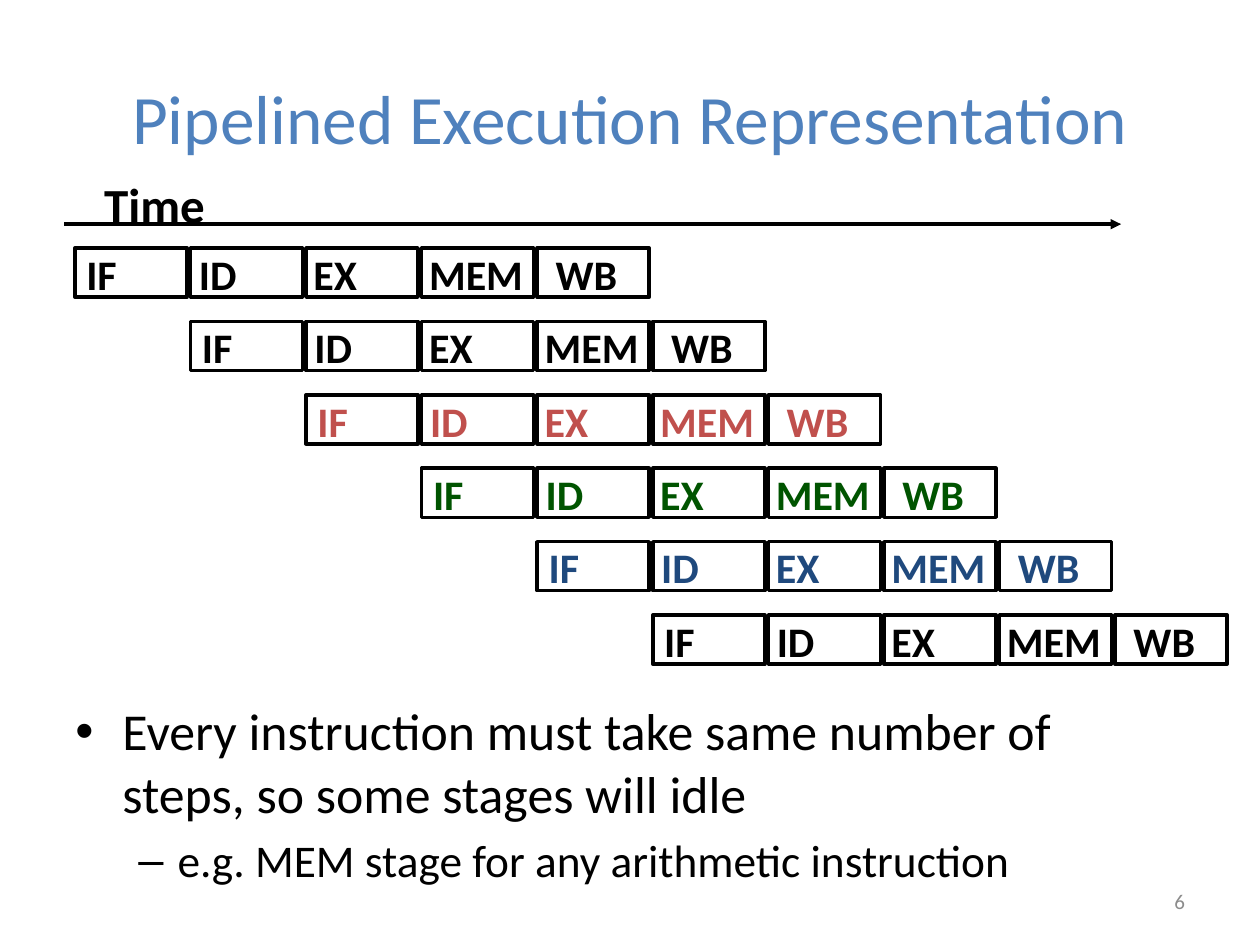
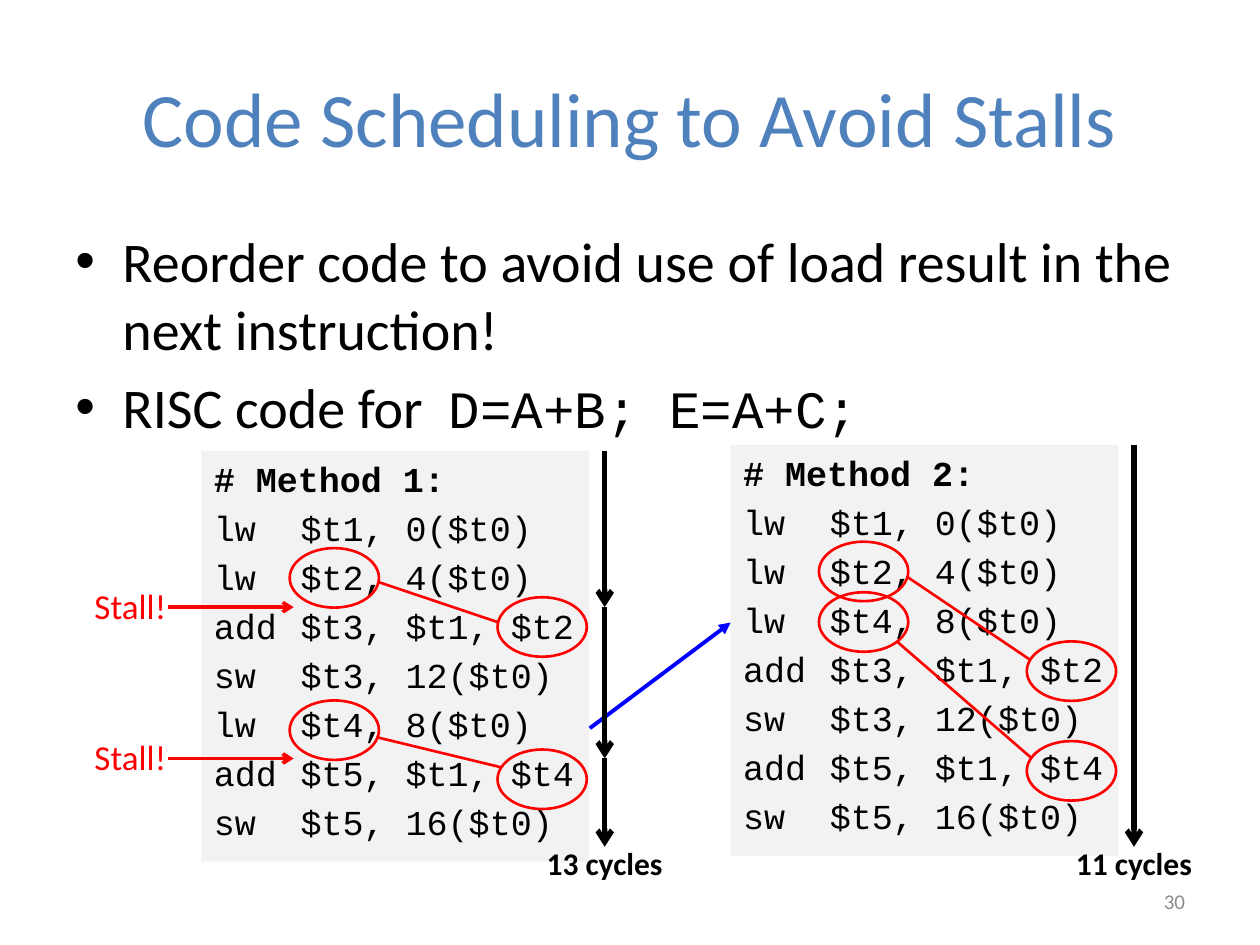
from lxml import etree
from pptx import Presentation
from pptx import util as u
from pptx.dml.color import RGBColor
from pptx.enum import shapes, text
from pptx.oxml import ns

BLACK = RGBColor(0x00, 0x00, 0x00)
TITLE_BLUE = RGBColor(0x4F, 0x81, 0xBD)
NAVY = RGBColor(0x1F, 0x49, 0x7D)
BRICK = RGBColor(0xC0, 0x50, 0x4D)
GREEN = RGBColor(0x00, 0x54, 0x00)
RED = RGBColor(0xFF, 0x00, 0x00)
BLUE = RGBColor(0x00, 0x00, 0xFF)
PALE = RGBColor(0xF2, 0xF2, 0xF2)
GREY = RGBColor(0x8C, 0x8C, 0x8C)

BODY_FONT = "Calibri"
CODE_FONT = "Courier New"
BULLETS = [("•", 0.95, -0.95), ("–", 2.06, -0.79)]
ALIGN = text.PP_ALIGN


def add_xml(parent, tag, **attributes):
    """Append a DrawingML element and return it."""
    values = {name: str(value) for name, value in attributes.items()}
    return etree.SubElement(parent, ns.qn("a:" + tag), values)


def write(paragraph, words, size=20, color=BLACK, bold=False, font=BODY_FONT, align=None):
    """Add a formatted run to a paragraph."""
    run = paragraph.add_run()
    run.text = words
    run.font.name = font
    run.font.size = u.Pt(size)
    run.font.bold = bold
    run.font.color.rgb = color
    if align is not None:
        paragraph.alignment = align


def space_paragraph(paragraph, bullet_level=None, tab=None):
    """Give a paragraph proportional space before, and a bullet or a tab stop."""
    properties = paragraph._p.get_or_add_pPr()
    add_xml(add_xml(properties, "spcBef"), "spcPct", val=20000)
    if bullet_level is not None:
        mark, margin, indent = BULLETS[bullet_level]
        properties.set("marL", str(u.Cm(margin)))
        properties.set("indent", str(u.Cm(indent)))
        paragraph.level = bullet_level
        add_xml(properties, "buFont", typeface="Arial")
        add_xml(properties, "buChar", char=mark)
    if tab is not None:
        add_xml(add_xml(properties, "tabLst"), "tab", pos=u.Cm(tab), algn="l")


class Deck:
    """The presentation, its shared style and the current slide."""

    def __init__(self):
        self.presentation = Presentation()
        self.presentation.slide_width = u.Cm(25.4)
        self.presentation.slide_height = u.Cm(19.05)
        self.slide = None

    def start_slide(self, title, number, title_size):
        """Start a slide with its title and page number."""
        self.slide = self.presentation.slides.add_slide(self.presentation.slide_layouts[6])
        middle = text.MSO_ANCHOR.MIDDLE
        self.label(title, 1.27, 0.76, 22.86, 3.18, anchor=middle, wrap=True,
                   size=title_size, color=TITLE_BLUE, align=ALIGN.CENTER)
        self.label(number, 18.21, 17.65, 5.93, 1.02, anchor=middle, wrap=True,
                   size=12, color=GREY, align=ALIGN.RIGHT)

    def frame(self, left, top, width, height, wrap=True, anchor=text.MSO_ANCHOR.TOP):
        """Add an empty text box and return its text frame."""
        box = self.slide.shapes.add_textbox(u.Cm(left), u.Cm(top), u.Cm(width), u.Cm(height))
        box.text_frame.word_wrap = wrap
        box.text_frame.vertical_anchor = anchor
        return box.text_frame

    def label(self, words, left, top, width, height, wrap=False,
              anchor=text.MSO_ANCHOR.TOP, **style):
        """Add one line of text."""
        frame = self.frame(left, top, width, height, wrap, anchor)
        if not wrap:
            frame.auto_size = text.MSO_AUTO_SIZE.SHAPE_TO_FIT_TEXT
        write(frame.paragraphs[0], words, **style)

    def bullets(self, items, top, height):
        """Add bulleted text from (level, [(words, style), ...]) items."""
        frame = self.frame(1.27, top, 22.86, height)
        for index, (level, runs) in enumerate(items):
            paragraph = frame.add_paragraph() if index else frame.paragraphs[0]
            space_paragraph(paragraph, bullet_level=level)
            for words, style in runs:
                write(paragraph, words, **style)

    def outline(self, kind, left, top, width, height, color=None, weight=None, fill=None):
        """Add a preset shape with an optional line and fill."""
        shape = self.slide.shapes.add_shape(
            kind, u.Cm(left), u.Cm(top), u.Cm(width), u.Cm(height))
        shape.shadow.inherit = False
        if fill is None:
            shape.fill.background()
        else:
            shape.fill.solid()
            shape.fill.fore_color.rgb = fill
        if color is None:
            shape.line.fill.background()
        else:
            shape.line.color.rgb = color
            shape.line.width = u.Pt(weight)
        return shape

    def line(self, start, end, color=BLACK, weight=2, head=None):
        """Add a straight line, with an arrowhead at its end if one is named."""
        connector = self.slide.shapes.add_connector(
            shapes.MSO_CONNECTOR.STRAIGHT, *(u.Cm(value) for value in (*start, *end)))
        connector.line.color.rgb = color
        connector.line.width = u.Pt(weight)
        if head:
            add_xml(connector.line._get_or_add_ln(), "tailEnd", type=head)
        add_xml(connector._element.spPr, "effectLst")

    def code(self, heading, lines, left, top):
        """Add a shaded code listing under a bold heading."""
        panel = self.outline(shapes.MSO_SHAPE.RECTANGLE, left, top, 7.82, 8.28, fill=PALE)
        frame = panel.text_frame
        frame.word_wrap = True
        frame.vertical_anchor = text.MSO_ANCHOR.TOP
        for index, words in enumerate([heading, *lines]):
            paragraph = frame.add_paragraph() if index else frame.paragraphs[0]
            space_paragraph(paragraph, tab=1.75)
            write(paragraph, words, font=CODE_FONT, bold=index == 0, align=ALIGN.LEFT)

    def dependency(self, source, target, start, end):
        """Circle two registers and link them."""
        for left, top in (source, target):
            self.outline(shapes.MSO_SHAPE.OVAL, left, top, 1.8, 1.2, RED, 1.5)
        self.line(start, end, RED, 1.5)

    def stall(self, y):
        """Mark a stall with a label and an arrow at height y."""
        self.label("Stall!", 1.52, y - 0.59, 2.08, 1.12, wrap=True, color=RED, align=ALIGN.RIGHT)
        self.line((3.38, y), (5.92, y), RED, 2, "arrow")

    def cycles(self, words, x, stops):
        """Draw chained time arrows down column x and their cycle count."""
        for top, bottom in zip(stops, stops[1:]):
            self.line((x, top), (x, bottom), weight=3, head="arrow")
        self.label(words, x - 1.42, 16.89, 2.84, 1.02, size=18, bold=True)


def pipeline_slide(deck):
    """Build the staircase of pipelined instructions."""
    deck.start_slide("Pipelined Execution Representation", "6", 39.6)
    deck.bullets([
        (0, [("Every instruction must take same number of steps, so some stages will idle",
              {"size": 29.6})]),
        (1, [("e.g. MEM stage for any arithmetic instruction", {"size": 25.9})]),
    ], 13.97, 3.86)
    stages = [("IF", -0.02, 1.12), ("ID", -0.08, 1.27), ("EX", -0.1, 1.4),
              ("MEM", -0.1, 2.41), ("WB", 0.12, 1.9)]
    step, row_height = 2.33, 1.48
    for row, color in enumerate([BLACK, BLACK, BRICK, GREEN, NAVY, BLACK]):
        top = 5 + row * row_height
        for column, (stage, shift, width) in enumerate(stages, start=row):
            left = 1.51 + column * step
            deck.outline(shapes.MSO_SHAPE.RECTANGLE, left, top, 2.26, 0.99, BLACK, 2)
            deck.label(stage, left + shift, top - 0.12, width, 1.27,
                       size=24, bold=True, color=color)
    deck.line((1.3, 4.52), (22.6, 4.52), head="triangle")
    deck.label("Time", 1.85, 3.4, 2.82, 1.42, size=28, bold=True)


def scheduling_slide(deck):
    """Build the comparison of two instruction orders."""
    deck.start_slide("Code Scheduling to Avoid Stalls", "30", 44)
    deck.bullets([
        (0, [("Reorder code to avoid use of load result in the next instruction!",
              {"size": 32})]),
        (0, [("RISC code for  ", {"size": 32}),
             ("D=A+B; E=A+C;", {"size": 30, "font": CODE_FONT})]),
    ], 4.45, 5.13)
    method_1 = ["lw\t$t1, 0($t0)", "lw\t$t2, 4($t0)", "add\t$t3, $t1, $t2",
                "sw\t$t3, 12($t0)", "lw\t$t4, 8($t0)", "add\t$t5, $t1, $t4",
                "sw\t$t5, 16($t0)"]
    method_2 = [method_1[index] for index in (0, 1, 4, 2, 3, 5, 6)]
    deck.code("# Method 1:", method_1, 4.06, 9.09)
    deck.code("# Method 2:", method_2, 14.73, 8.97)
    deck.line((11.89, 14.68), (14.73, 12.55), BLUE, 2.25, "triangle")

    deck.dependency((5.84, 11.05), (10.03, 12.04), (7.62, 11.73), (10.06, 12.55))
    deck.dependency((5.84, 14.12), (10.03, 15.11), (7.59, 14.86), (10.11, 15.47))
    deck.dependency((16.51, 10.92), (20.7, 12.93), (18.29, 11.63), (20.78, 13.31))
    deck.dependency((16.51, 11.94), (20.7, 14.94), (18.08, 12.93), (20.78, 15.27))

    stalls = [12.24, 15.29]
    for y in stalls:
        deck.stall(y)
    deck.cycles("13 cycles", 12.19, [9.09, *stalls, 17.07])
    deck.cycles("11 cycles", 22.86, [8.97, 17.07])


def main():
    """Build and save the presentation."""
    deck = Deck()
    pipeline_slide(deck)
    scheduling_slide(deck)
    deck.presentation.save("out.pptx")


if __name__ == "__main__":
    main()
